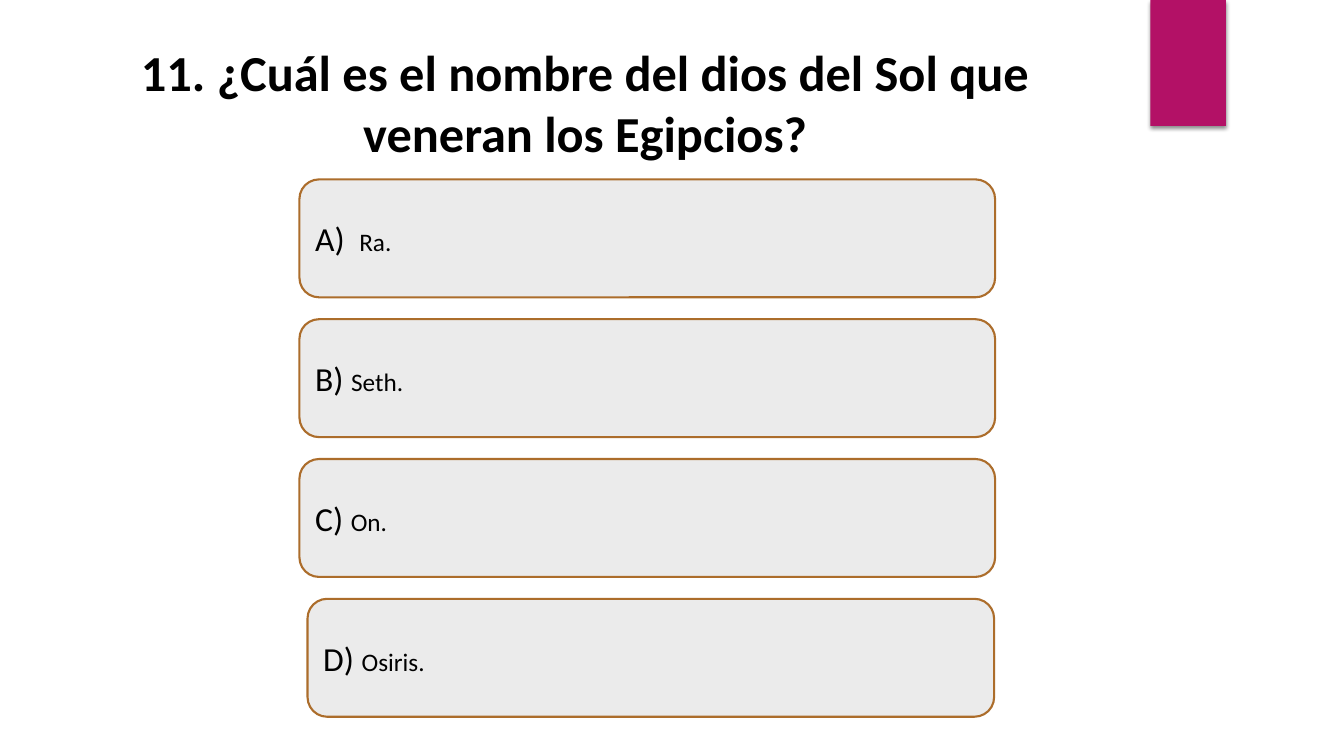
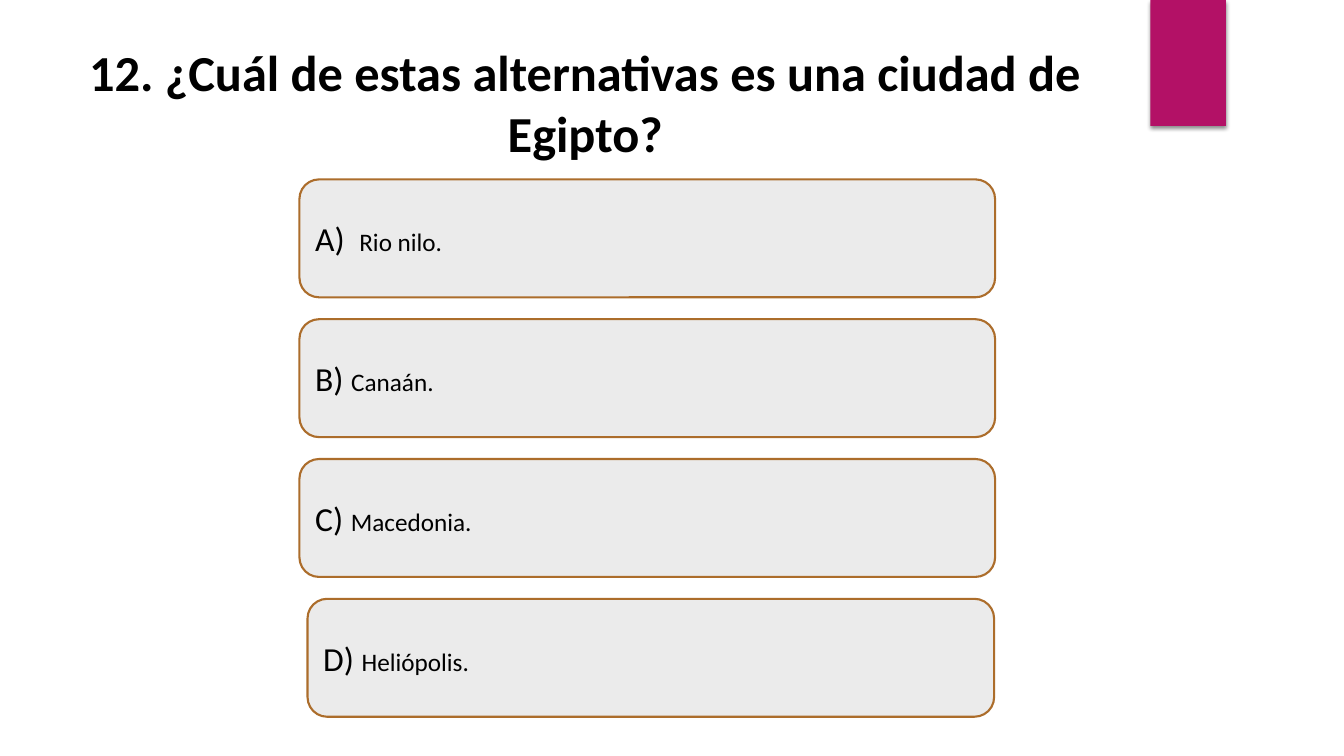
from lxml.etree import SubElement
from pptx import Presentation
from pptx.dml.color import RGBColor
from pptx.enum.shapes import MSO_SHAPE
from pptx.enum.text import MSO_ANCHOR, MSO_AUTO_SIZE, PP_ALIGN
from pptx.oxml.ns import qn
from pptx.util import Inches, Pt

BLACK = RGBColor(0x00, 0x00, 0x00)
WHITE = RGBColor(0xFF, 0xFF, 0xFF)
MAGENTA = RGBColor(0xB3, 0x11, 0x66)
GREY = RGBColor(0xEB, 0xEB, 0xEB)
BROWN = RGBColor(0xAC, 0x6D, 0x2B)

FONT = "Calibri"
GAP_FONT = "TeX Gyre Adventor"
NBSP = chr(160)

TITLE_ONLY = 5
ANSWER_TOP, ANSWER_PITCH, ANSWER_HEIGHT = 1.78, 1.387, 1.17
ANSWER_SPANS = [(2.97, 6.9)] * 3 + [(3.05, 6.81)]  # left, width

QUESTIONS = [
    ("11. ¿Cuál es el nombre del dios del Sol que veneran los Egipcios?",
     ["Ra.", "Seth.", "On.", "Osiris."]),
    ("12. ¿Cuál de estas alternativas es una ciudad de Egipto?",
     ["Rio nilo.", "Canaán.", "Macedonia.", "Heliópolis."]),
]


class QuizDeck:
    """Holds the quiz style and the slide being built."""

    def __init__(self):
        self.prs = Presentation()
        self.prs.slide_width = Inches(13.33)
        self.prs.slide_height = Inches(7.5)
        self.slide = None

    def new_slide(self):
        layout = self.prs.slide_layouts[TITLE_ONLY]
        self.slide = self.prs.slides.add_slide(layout)

    def style(self, r, size, bold=False, name=FONT, color=BLACK):
        r.font.name = name
        r.font.size = Pt(size)
        r.font.bold = bold
        r.font.color.rgb = color

    def shape(self, kind, left, top, width, height, fill):
        sp = self.slide.shapes.add_shape(
            kind, Inches(left), Inches(top), Inches(width), Inches(height))
        sp.shadow.inherit = False
        sp.fill.solid()
        sp.fill.fore_color.rgb = fill
        return sp

    def band(self):
        sp = self.shape(MSO_SHAPE.RECTANGLE, 11.41, 0, 0.75, 1.25, MAGENTA)
        sp.line.fill.background()
        # Soft shadow straight below the band
        effects = sp._element.spPr.find(qn("a:effectLst"))
        shadow = SubElement(effects, qn("a:outerShdw"), blurRad=str(Pt(3)),
                            dist=str(Pt(2)), dir="5400000", rotWithShape="0")
        color = SubElement(shadow, qn("a:srgbClr"), val=str(BLACK))
        SubElement(color, qn("a:alpha"), val="45000")

    def title(self, text):
        sp = self.slide.shapes.title
        sp.left, sp.top = Inches(0.54), Inches(0.36)
        sp.width, sp.height = Inches(10.53), Inches(1.31)
        tf = sp.text_frame
        tf.text = text
        tf.word_wrap = True
        tf.auto_size = MSO_AUTO_SIZE.NONE
        tf.vertical_anchor = MSO_ANCHOR.TOP
        p = tf.paragraphs[0]
        p.alignment = PP_ALIGN.CENTER
        self.style(p.runs[0], 36, bold=True)

    def answer(self, index, text):
        left, width = ANSWER_SPANS[index]
        top = ANSWER_TOP + index * ANSWER_PITCH
        sp = self.shape(MSO_SHAPE.ROUNDED_RECTANGLE, left, top, width,
                        ANSWER_HEIGHT, GREY)
        sp.line.color.rgb = BROWN
        sp.line.width = Pt(1.5)
        tf = sp.text_frame
        tf.word_wrap = True
        tf.vertical_anchor = MSO_ANCHOR.MIDDLE
        p = tf.paragraphs[0]
        p.alignment = PP_ALIGN.LEFT
        self.run(p, "ABCD"[index] + ") ", 24)
        if index == 0:  # the first answer sits a little further right
            self.run(p, NBSP, 18, name=GAP_FONT, color=WHITE)
        self.run(p, text, 18)

    def run(self, p, text, size, **look):
        r = p.add_run()
        r.text = text
        self.style(r, size, **look)


def main():
    deck = QuizDeck()
    for question, answers in QUESTIONS:
        deck.new_slide()
        deck.band()
        deck.title(question)
        for index, text in enumerate(answers):
            deck.answer(index, text)
    deck.prs.save("out.pptx")


if __name__ == "__main__":
    main()
